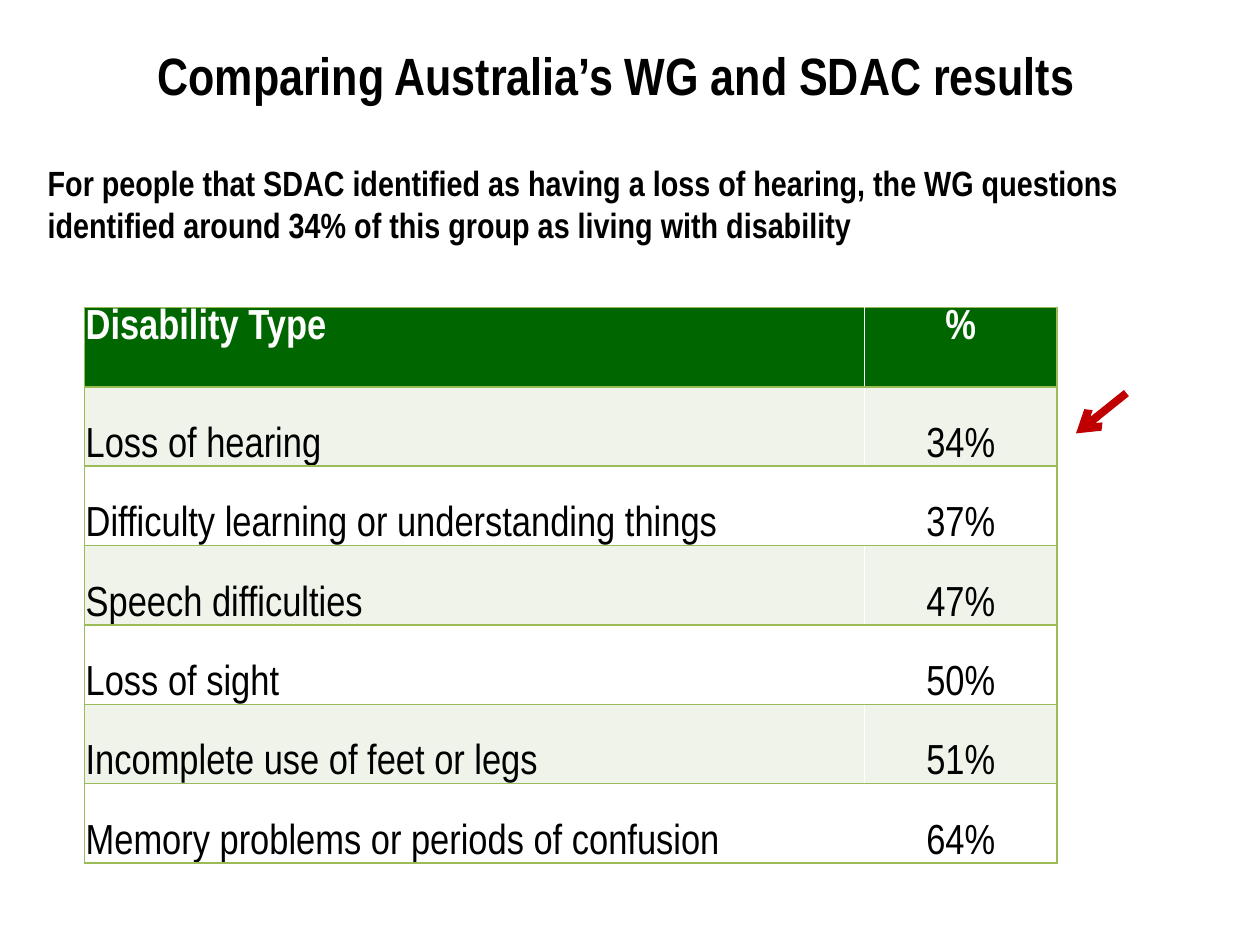
import pptx
import pptx.util
import pptx.dml.color
import pptx.enum.shapes
import pptx.enum.text
import pptx.oxml
import pptx.oxml.ns

Inches, Pt = pptx.util.Inches, pptx.util.Pt
RGBColor = pptx.dml.color.RGBColor
PP_ALIGN = pptx.enum.text.PP_ALIGN
MSO_ANCHOR = pptx.enum.text.MSO_ANCHOR
MSO_AUTO_SIZE = pptx.enum.text.MSO_AUTO_SIZE

FONT = "Arial Narrow"
BLACK = RGBColor(0x00, 0x00, 0x00)
WHITE = RGBColor(0xFF, 0xFF, 0xFF)
HEADER_GREEN = RGBColor(0x00, 0x66, 0x00)
BAND = RGBColor(0xEF, 0xF3, 0xEA)
BORDER_GREEN = RGBColor(0x9B, 0xBB, 0x59)
ARROW_RED = RGBColor(0xC0, 0x00, 0x00)

ROWS = [
    ("Disability Type", "%"),
    ("Loss of hearing", "34%"),
    ("Difficulty learning or understanding things", "37%"),
    ("Speech difficulties", "47%"),
    ("Loss of sight", "50%"),
    ("Incomplete use of feet or legs", "51%"),
    ("Memory problems or periods of confusion", "64%"),
]


def format_paragraph(p, size, color=BLACK, bold=True, align=PP_ALIGN.LEFT):
    p.alignment = align
    p.font.name, p.font.size = FONT, Pt(size)
    p.font.bold, p.font.color.rgb = bold, color


def place_title(s, text, left, top, width, height):
    title = s.shapes.title
    title.left, title.top, title.width, title.height = left, top, width, height
    tf = title.text_frame
    tf.text = text
    tf.word_wrap = True
    tf.auto_size = MSO_AUTO_SIZE.SHAPE_TO_FIT_TEXT
    tf.vertical_anchor = MSO_ANCHOR.TOP
    format_paragraph(tf.paragraphs[0], 30)


def add_finding(s, text, left, top, width, height):
    tf = s.shapes.add_textbox(left, top, width, height).text_frame
    tf.text = text
    tf.word_wrap = False
    tf.auto_size = MSO_AUTO_SIZE.SHAPE_TO_FIT_TEXT
    format_paragraph(tf.paragraphs[0], 20)


def set_borders(cell, **colors):
    """Draw 1 pt borders; sides are given in schema order: L, R, T, B."""
    tcPr = cell._tc.get_or_add_tcPr()
    for i, (side, color) in enumerate(colors.items()):
        tcPr.insert(i, pptx.oxml.parse_xml(
            f'<a:ln{side} {pptx.oxml.ns.nsdecls("a")} w="12700"><a:solidFill>'
            f'<a:srgbClr val="{color}"/></a:solidFill></a:ln{side}>'))


def add_results_table(s, left, top, width, height):
    table = s.shapes.add_table(len(ROWS), 2, left, top, width, height).table
    table.columns[0].width = Inches(6.19)
    table.columns[1].width = width - Inches(6.19)
    for i, values in enumerate(ROWS):
        header = i == 0
        table.rows[i].height = height // len(ROWS)
        for j, value in enumerate(values):
            cell = table.cell(i, j)
            cell.text = value
            cell.margin_left = cell.margin_right = cell.margin_top = Inches(0.01)
            cell.margin_bottom = 0
            cell.vertical_anchor = MSO_ANCHOR.TOP if header else MSO_ANCHOR.BOTTOM
            cell.fill.solid()
            cell.fill.fore_color.rgb = (
                HEADER_GREEN if header else BAND if i % 2 else WHITE)
            format_paragraph(cell.text_frame.paragraphs[0], 24,
                             WHITE if header else BLACK, header,
                             PP_ALIGN.CENTER if j else PP_ALIGN.LEFT)
            # White divider between the columns, green everywhere else
            set_borders(cell,
                        L=WHITE if j else BORDER_GREEN,
                        R=BORDER_GREEN if j else WHITE,
                        T=BORDER_GREEN, B=BORDER_GREEN)


def add_arrow(s, x1, y1, x2, y2):
    arrow = s.shapes.add_connector(
        pptx.enum.shapes.MSO_CONNECTOR.STRAIGHT, x1, y1, x2, y2)
    arrow.line.color.rgb = ARROW_RED
    arrow.line.width = Pt(4.5)
    ns = pptx.oxml.ns.nsdecls("a")
    arrow.line._get_or_add_ln().append(
        pptx.oxml.parse_xml(f'<a:tailEnd {ns} type="arrow"/>'))
    arrow._element.spPr.append(pptx.oxml.parse_xml(f"<a:effectLst {ns}/>"))


def main():
    prs = pptx.Presentation()
    prs.slide_width, prs.slide_height = Inches(10), Inches(7.5)
    s = prs.slides.add_slide(prs.slide_layouts[5])

    # Title and key finding
    place_title(s, "Comparing Australia’s WG and SDAC results",
                Inches(1.15), Inches(0.29), Inches(8.11), Inches(0.61))
    add_finding(s, "For people that SDAC identified as having a loss of hearing, "
                "the WG questions \videntified around 34% of this group as "
                "living with disability",
                Inches(0.28), Inches(1.23), Inches(8.81), Inches(0.77))

    # Results, with an arrow to the hearing row
    add_results_table(s, Inches(0.67), Inches(2.44), Inches(7.72), Inches(4.41))
    add_arrow(s, Inches(8.94), Inches(3.12), Inches(8.54), Inches(3.44))

    prs.save("out.pptx")


if __name__ == "__main__":
    main()
